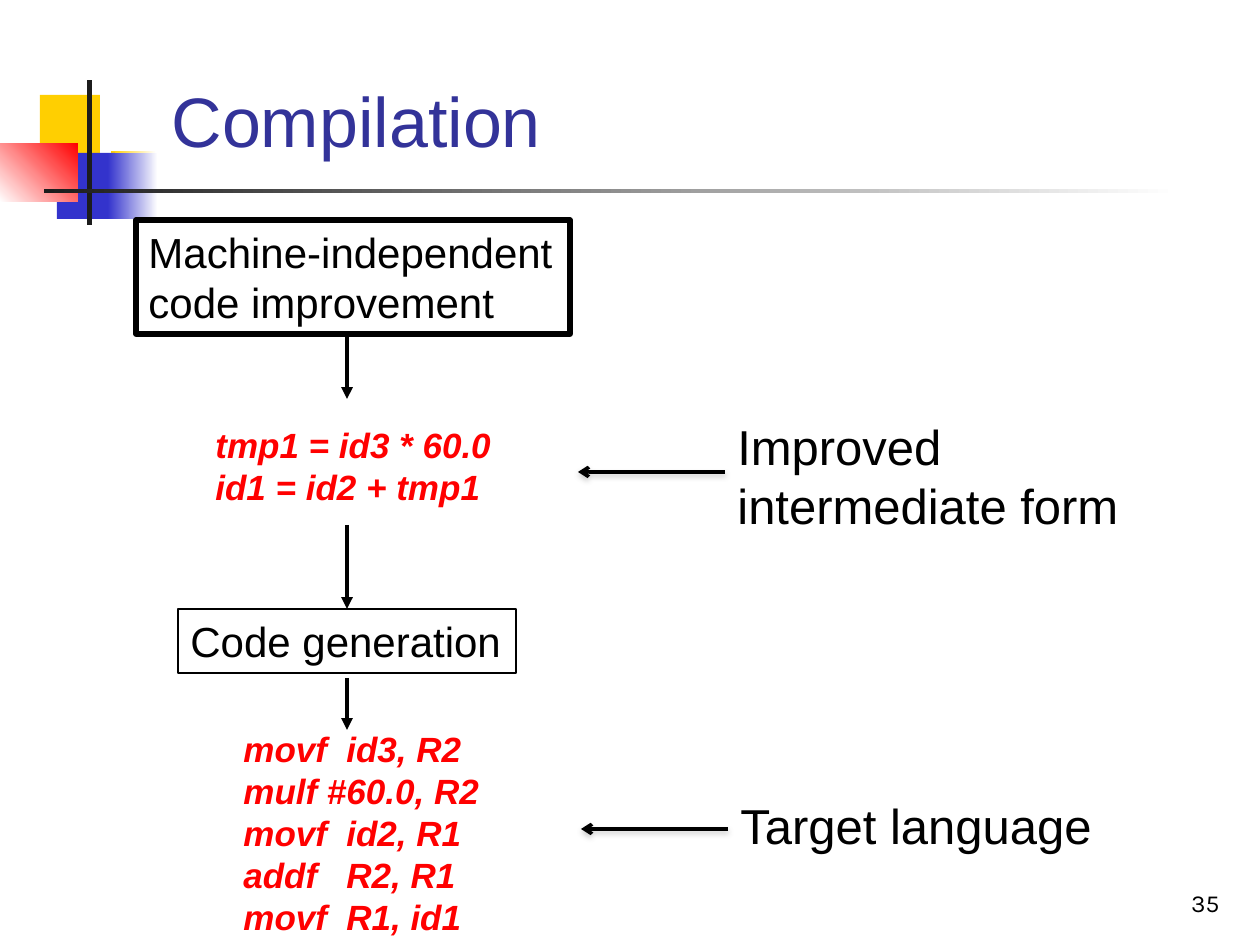
from dataclasses import dataclass

from lxml import etree
from pptx import Presentation
from pptx.dml.color import RGBColor
from pptx.enum.shapes import MSO_CONNECTOR, MSO_SHAPE
from pptx.enum.text import MSO_ANCHOR, MSO_AUTO_SIZE, PP_ALIGN
from pptx.oxml.ns import qn
from pptx.util import Pt

RECTANGLE = MSO_SHAPE.RECTANGLE
STRAIGHT = MSO_CONNECTOR.STRAIGHT
TOP, BOTTOM = MSO_ANCHOR.TOP, MSO_ANCHOR.BOTTOM
LEFT, RIGHT = PP_ALIGN.LEFT, PP_ALIGN.RIGHT
FIT_SHAPE, FIXED = MSO_AUTO_SIZE.SHAPE_TO_FIT_TEXT, MSO_AUTO_SIZE.NONE
TOP_SIDE = 0
EMU_PER_PX = 914400 / 126


@dataclass(frozen=True)
class Theme:
    ink: str = "000000"
    heading: str = "333399"
    code: str = "FF0000"
    white: str = "FFFFFF"
    gold: str = "FFCF01"
    blue: str = "3333CC"
    red: str = "FF0000"
    bar: str = "1C1C1C"
    shadow: str = "808080"
    font: str = "Arial"
    number_font: str = "Karla"
    title_size: int = 40
    label_size: int = 28
    step_size: int = 24
    code_size: int = 20
    number_size: int = 14


def px(length):
    return round(length * EMU_PER_PX)


def rgb(value):
    return RGBColor.from_string(value)


class SlideBuilder:
    def __init__(self, page, theme):
        self.page = page
        self.theme = theme

    def fill_text(self, box, paragraphs, size, color=None, font=None, anchor=TOP,
                  align=LEFT, wrap=False, fit=FIT_SHAPE, bold=False, tab=None):
        frame = box.text_frame
        frame_format = {"word_wrap": wrap, "vertical_anchor": anchor, "auto_size": fit}
        for name, value in frame_format.items():
            setattr(frame, name, value)
        font_format = {"name": font or self.theme.font, "size": Pt(size),
                       "bold": bold, "italic": bold}
        for index, text in enumerate(paragraphs):
            para = frame.paragraphs[0] if index == 0 else frame.add_paragraph()
            para.text = text
            para.alignment = align
            if tab:
                stops = etree.SubElement(para._p.get_or_add_pPr(), qn("a:tabLst"))
                etree.SubElement(stops, qn("a:tab"), pos=str(px(tab)), algn="l")
            for span in para.runs:
                for name, value in font_format.items():
                    setattr(span.font, name, value)
                span.font.color.rgb = rgb(color or self.theme.ink)

    def title(self, area, text):
        box = self.page.shapes.title
        box.left, box.top, box.width, box.height = map(px, area)
        self.fill_text(box, [text], self.theme.title_size, self.theme.heading,
                       anchor=BOTTOM, wrap=True, fit=FIXED)

    def text(self, area, paragraphs, size, **style):
        box = self.page.shapes.add_textbox(*map(px, area))
        self.fill_text(box, paragraphs, size, **style)

    def code(self, area, lines, **style):
        self.text(area, lines, self.theme.code_size, color=self.theme.code,
                  bold=True, **style)

    def rectangle(self, area):
        shape = self.page.shapes.add_shape(RECTANGLE, *map(px, area))
        shape.shadow.inherit = False
        return shape

    def ornament(self, area, start, end=None, angle=0):
        shape = self.rectangle(area)
        shape.line.fill.background()
        if end is None:
            shape.fill.solid()
            shape.fill.fore_color.rgb = rgb(start)
            return
        shape.fill.gradient()
        shape.fill.gradient_angle = angle
        for stop, color in zip(shape.fill.gradient_stops, (start, end)):
            stop.color.rgb = rgb(color)

    def step(self, area, text, border):
        shape = self.rectangle(area)
        shape.fill.background()
        shape.line.color.rgb = rgb(self.theme.ink)
        shape.line.width = Pt(border)
        self.fill_text(shape, [text], self.theme.step_size)
        return shape

    def arrow(self, start, end, width, head="triangle", target=None, shadow=False):
        line = self.page.shapes.add_connector(STRAIGHT, *map(px, (*start, *end)))
        if target is not None:
            line.end_connect(target, TOP_SIDE)
        line.line.color.rgb = rgb(self.theme.ink)
        line.line.width = Pt(width)
        properties = line._element.spPr
        etree.SubElement(properties.find(qn("a:ln")), qn("a:tailEnd"), type=head)
        effects = etree.SubElement(properties, qn("a:effectLst"))
        if shadow:
            outer = etree.SubElement(effects, qn("a:outerShdw"), blurRad=str(Pt(3.1)),
                                     dist=str(Pt(1.6)), dir="5400000", rotWithShape="0")
            color = etree.SubElement(outer, qn("a:srgbClr"), val=self.theme.shadow)
            etree.SubElement(color, qn("a:alpha"), val="38000")


def main():
    theme = Theme()
    deck = Presentation()
    deck.slide_width, deck.slide_height = px(1260), px(945)
    page = deck.slides.add_slide(deck.slide_layouts[5])
    build = SlideBuilder(page, theme)

    # Corner ornament and title rule
    build.ornament((40, 95, 60, 65), theme.gold)
    build.ornament((111, 151, 45, 65), theme.gold, theme.white)
    build.ornament((57, 153, 58, 66), theme.blue)
    build.ornament((108, 153, 50, 66), theme.blue, theme.white)
    build.ornament((0, 143, 78, 59), theme.white, theme.red, angle=45)
    build.ornament((87, 80, 5, 145), theme.bar)
    build.ornament((44, 189, 1134, 4), theme.bar, theme.white)

    # Title and page number
    build.title((159, 29, 1073, 139), "Compilation")
    build.text((970, 861, 262, 63), ["35"], theme.number_size, font=theme.number_font,
               anchor=BOTTOM, align=RIGHT, wrap=True, fit=FIXED)

    # Compiler steps
    build.step((136, 220, 434, 114), "Machine-independent\ncode improvement", 3)
    generation = build.step((178, 609, 338, 64), "Code generation", 0.75)

    # Code after each step
    build.code((203, 417, 312, 97), ["tmp1 = id3 * 60.0", "id1 = id2 + tmp1"])
    build.code((231, 721, 315, 224),
               ["movf\tid3, R2", "mulf #60.0, R2", "movf\tid2, R1",
                "addf\tR2, R1", "movf\tR1, id1"], wrap=True, tab=103)

    # Flow downwards
    flow_x = 347
    for top, bottom, target in ((336, 399, None), (525, 609, generation), (678, 730, None)):
        build.arrow((flow_x, top), (flow_x, bottom), 2.25, target=target)

    # Labels pointing at the code
    labels = (
        ((725, 410, 425, 131), "Improved\nintermediate form", 472),
        ((728, 789, 382, 72), "Target language", 829),
    )
    for area, text, y in labels:
        build.text(area, [text], theme.label_size)
        build.arrow((area[0], y), (area[0] - 147, y), 2, head="arrow", shadow=True)

    deck.save("out.pptx")


if __name__ == "__main__":
    main()
